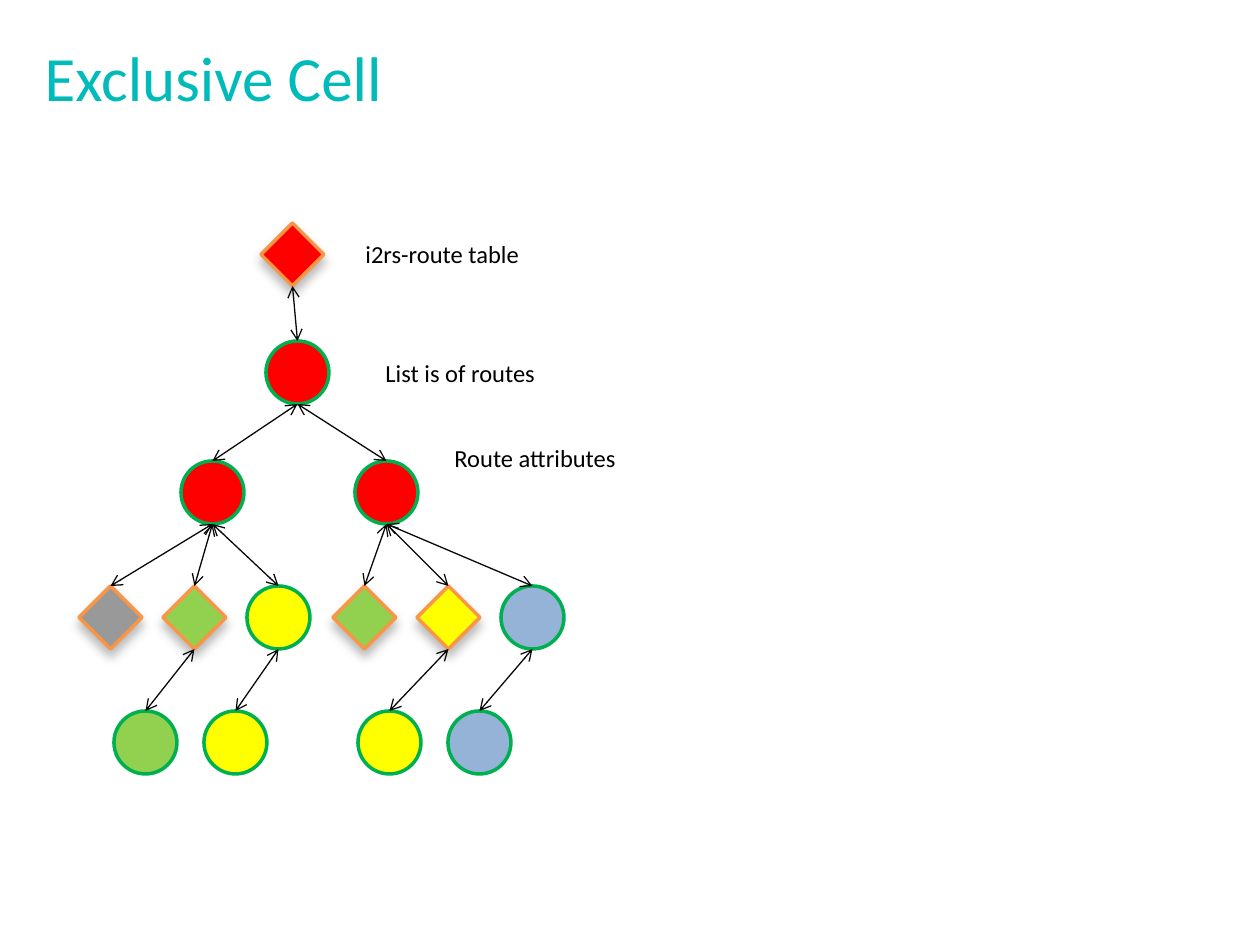
from lxml.etree import SubElement
from pptx import Presentation
from pptx.dml.color import RGBColor
from pptx.enum.shapes import MSO_CONNECTOR as Link, MSO_SHAPE as Kind
from pptx.enum.text import MSO_ANCHOR as Anchor, PP_ALIGN as Align
from pptx.oxml.ns import qn
from pptx.util import Emu, Pt

SCALE = 914400 / 126
SIZE = 63  # width and height of every node
FONT = "Calibri"

TEAL = RGBColor(0x01, 0xBB, 0xBB)
BLACK = RGBColor(0x00, 0x00, 0x00)
INK = RGBColor(0x08, 0x08, 0x08)
RED = RGBColor(0xFF, 0x00, 0x00)
YELLOW = RGBColor(0xFF, 0xFF, 0x00)
LIME = RGBColor(0x92, 0xD0, 0x50)
GRAY = RGBColor(0x99, 0x99, 0x99)
BLUE = RGBColor(0x95, 0xB3, 0xD7)
GREEN = RGBColor(0x00, 0xB0, 0x50)
ORANGE = RGBColor(0xF7, 0x96, 0x46)


def px(n):
    return Emu(round(n * SCALE))


def style(frame, size, color):
    font = frame.paragraphs[0].runs[0].font
    font.name = FONT
    font.size = Pt(size)
    font.color.rgb = color


def add_title(slide, text):
    title = slide.shapes.title
    title.left, title.top, title.width, title.height = map(px, (32, 35, 1183, 96))
    frame = title.text_frame
    frame.text = text
    frame.vertical_anchor = Anchor.MIDDLE
    frame.paragraphs[0].alignment = Align.LEFT
    frame.paragraphs[0].line_spacing = 0.8
    style(frame, 36, TEAL)


def add_label(slide, text, left, top):
    box = slide.shapes.add_textbox(px(left), px(top), px(222), px(43))
    box.text_frame.word_wrap = True
    box.text_frame.text = text
    style(box.text_frame, 14, BLACK)


def add_shadow(shape):
    effects = shape._element.spPr.find(qn("a:effectLst"))
    outer = SubElement(effects, qn("a:outerShdw"), blurRad=str(Pt(6)),
                       dist=str(Pt(4)), dir="5400000", rotWithShape="0")
    color = SubElement(outer, qn("a:srgbClr"), val="000000")
    SubElement(color, qn("a:alpha"), val="27000")


def add_node(shapes, kind, fill, left, top):
    node = shapes.add_shape(kind, px(left), px(top), px(SIZE), px(SIZE))
    node.shadow.inherit = False
    node.fill.solid()
    node.fill.fore_color.rgb = fill
    node.line.width = Pt(2)
    node.line.color.rgb = ORANGE if kind == Kind.DIAMOND else GREEN
    if kind == Kind.DIAMOND:
        add_shadow(node)
    return node


def add_row(slide, left, top, step, items):
    shapes = slide.shapes.add_group_shape().shapes
    return [add_node(shapes, kind, fill, left + i * step, top)
            for i, (kind, fill) in enumerate(items)]


def add_arrow(slide, child, parent):
    x, y = parent.left + parent.width // 2, parent.top + parent.height
    line = slide.shapes.add_connector(Link.STRAIGHT, x, y, x, y)
    line.begin_connect(child, 0)
    # Site 2 is the bottom of a diamond, but the left side of an ellipse
    if parent.auto_shape_type == Kind.DIAMOND:
        line.end_connect(parent, 2)
    line.line.width = Pt(0.75)
    line.line.color.rgb = INK
    stroke = line.line._get_or_add_ln()
    for end in ("a:headEnd", "a:tailEnd"):
        SubElement(stroke, qn(end), type="arrow")
    SubElement(line._element.spPr, qn("a:effectLst"))


def main():
    deck = Presentation()
    deck.slide_width, deck.slide_height = px(1260), px(945)
    slide = deck.slides.add_slide(deck.slide_layouts[5])
    add_title(slide, "Exclusive Cell")

    # Upper levels of the tree
    oval, gem = Kind.OVAL, Kind.DIAMOND
    table = add_node(slide.shapes, gem, RED, 261, 223)
    routes = add_node(slide.shapes, oval, RED, 266, 341)
    pair = [add_node(slide.shapes, oval, RED, x, 461) for x in (181, 355)]

    # Attributes of each route, and the cells below them
    west = add_row(slide, 79, 586, 84, [(gem, GRAY), (gem, LIME), (oval, YELLOW)])
    east = add_row(slide, 333, 586, 84, [(gem, LIME), (gem, YELLOW), (oval, BLUE)])
    west_ends = add_row(slide, 114, 711, 90, [(oval, LIME), (oval, YELLOW)])
    east_ends = add_row(slide, 358, 711, 90, [(oval, YELLOW), (oval, BLUE)])

    # Links from child to parent
    links = [(routes, table)] + [(node, routes) for node in pair]
    for top, kids, ends in zip(pair, (west, east), (west_ends, east_ends)):
        links += [(kid, top) for kid in kids]
        links += zip(ends, kids[1:])
    for child, parent in links:
        add_arrow(slide, child, parent)

    # Level names
    for text, left, top in (("i2rs-route table", 353, 233),
                            ("List is of routes", 373, 352),
                            ("Route attributes", 442, 437)):
        add_label(slide, text, left, top)

    deck.save("out.pptx")


if __name__ == "__main__":
    main()
